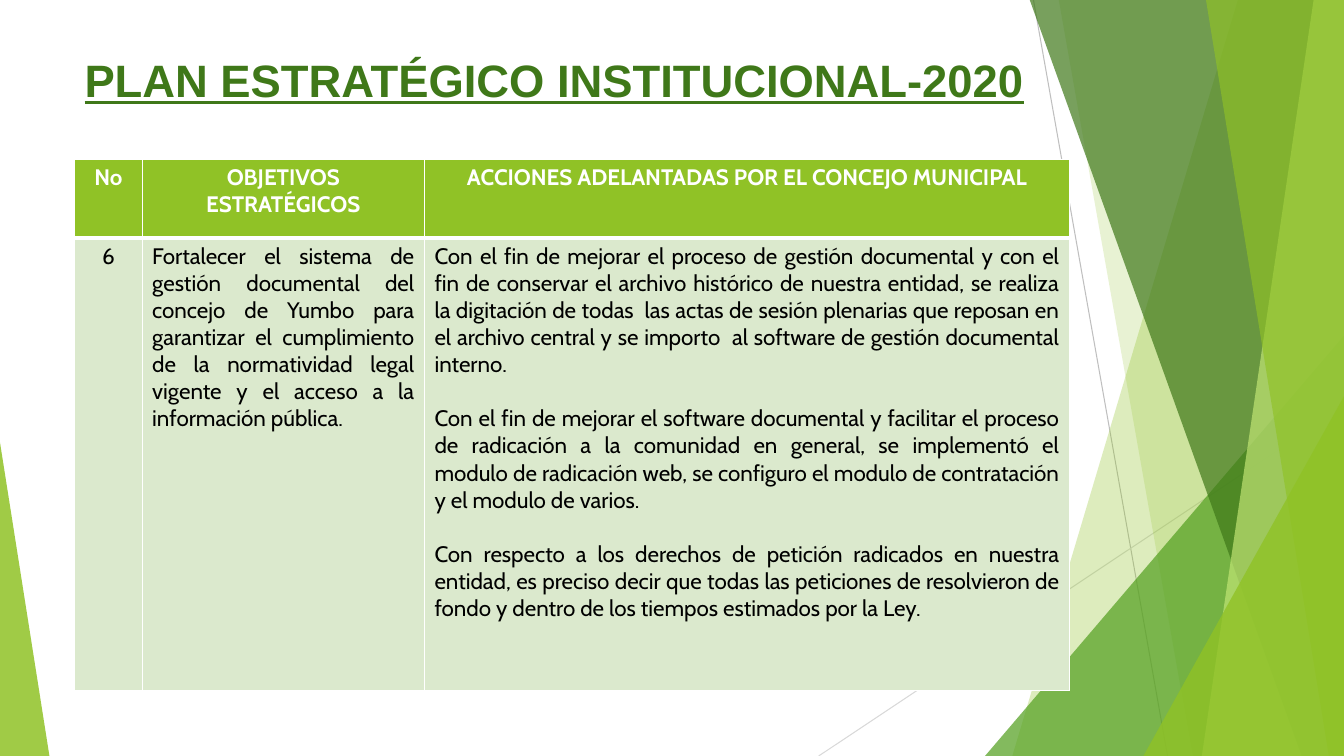
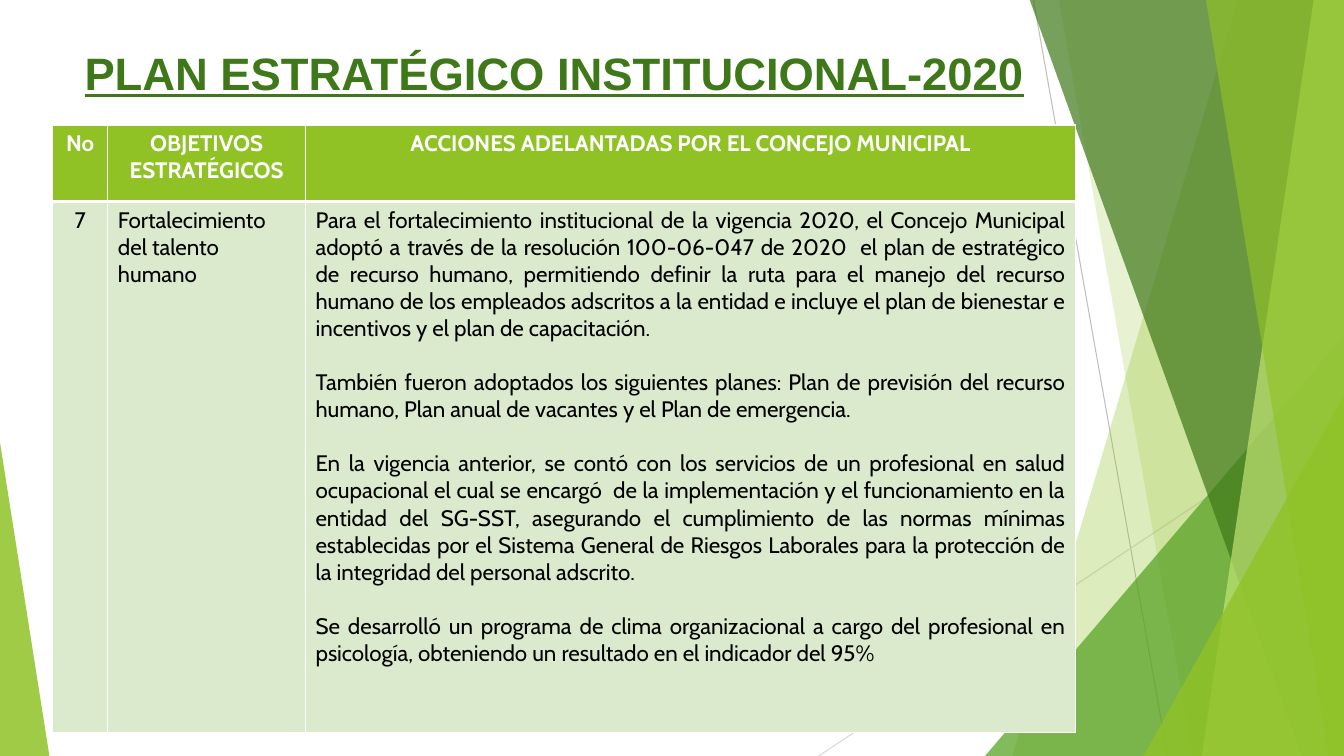
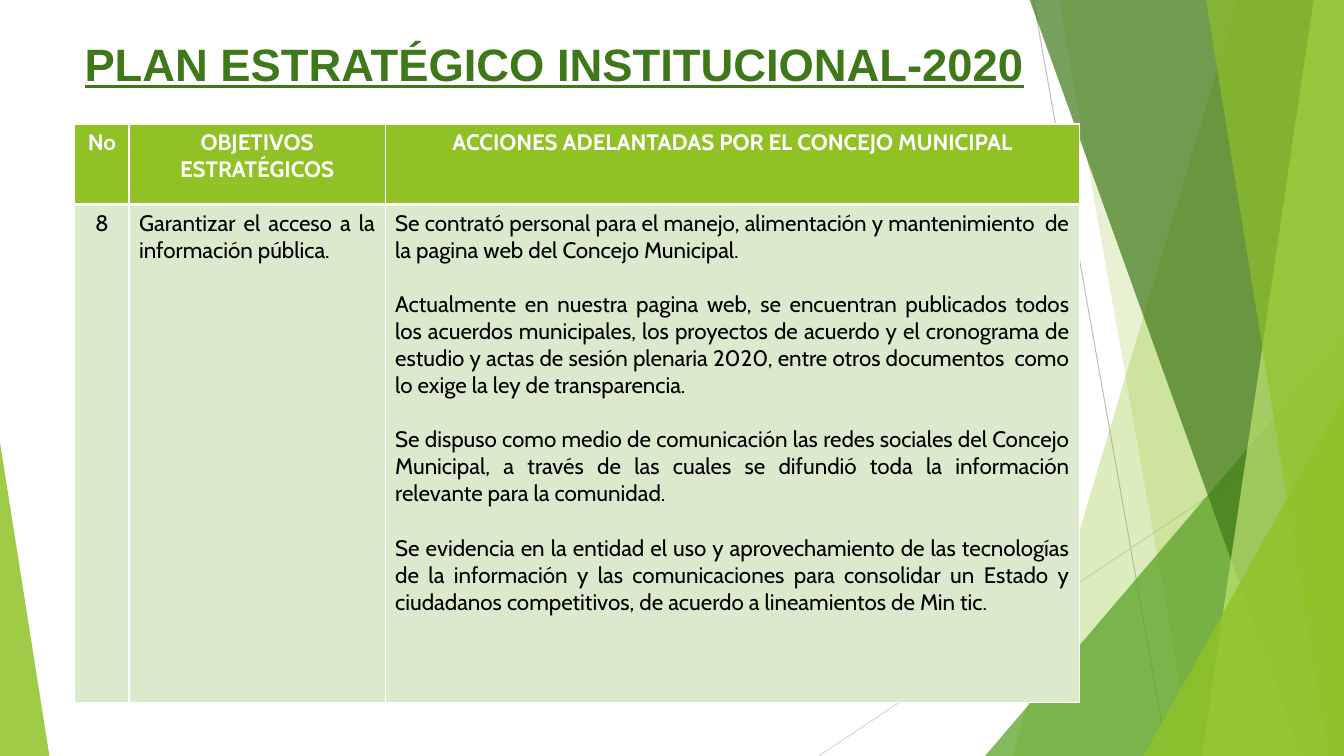
from dataclasses import dataclass

from lxml.etree import SubElement
from pptx import Presentation
from pptx.dml.color import RGBColor
from pptx.enum.shapes import MSO_CONNECTOR as Connector, MSO_SHAPE as Shape
from pptx.enum.text import MSO_ANCHOR as Anchor, PP_ALIGN as Align
from pptx.oxml.ns import qn
from pptx.util import Inches, Pt


@dataclass(frozen=True)
class Theme:
    width: float = 13.33
    height: float = 7.5
    lime: str = "90C226"
    pale_lime: str = "C0E474"
    green: str = "54A021"
    dark_green: str = "3F7819"
    body_fill: str = "DBE9CD"
    white: str = "FFFFFF"
    black: str = "000000"
    grey: str = "BFBFBF"
    light_grey: str = "D9D9D9"
    title_font: str = "Arial"
    body_font: str = "Cabin"
    title_size: float = 32.4
    body_size: float = 16
    paragraph_gap: float = 19.4
    hairline: float = 0.75
    cell_line: float = 1
    header_line: float = 3


THEME = Theme()
TITLE = "PLAN ESTRATÉGICO INSTITUCIONAL-2020"
HEADINGS = ["No", "OBJETIVOS ESTRATÉGICOS", "ACCIONES ADELANTADAS POR EL CONCEJO MUNICIPAL"]


class PlanDeck:
    def __init__(self, theme):
        self.theme = theme
        self.deck = Presentation()
        self.deck.slide_width = Inches(theme.width)
        self.deck.slide_height = Inches(theme.height)
        self.page = None

    def add_page(self):
        self.page = self.deck.slides.add_slide(self.deck.slide_layouts[6])
        self.backdrop()

    # Backdrop elements
    def line(self, start, end, color):
        points = [Inches(value) for value in (*start, *end)]
        line = self.page.shapes.add_connector(Connector.STRAIGHT, *points)
        line.line.color.rgb = RGBColor.from_string(color)
        line.line.width = Pt(self.theme.hairline)
        SubElement(line.element.spPr, qn("a:effectLst"))

    def tint(self, shape, color, opacity):
        shape.shadow.inherit = False
        shape.line.fill.background()
        shape.fill.solid()
        shape.fill.fore_color.rgb = RGBColor.from_string(color)
        fill_color = shape.element.spPr.find(qn("a:solidFill")).find(qn("a:srgbClr"))
        SubElement(fill_color, qn("a:alpha"), val=str(opacity * 1000))

    def wedge(self, top_x, bottom_x, color, opacity):
        """Fill the page from a slanted edge to its right side."""
        right, top, bottom = self.theme.width, -0.01, self.theme.height
        corners = [(top_x, top), (right, top), (right, bottom), (bottom_x, bottom)]
        points = [(Inches(x), Inches(y)) for x, y in corners]
        outline = self.page.shapes.build_freeform(*points[0])
        outline.add_line_segments(points[1:], close=True)
        self.tint(outline.convert_to_shape(), color, opacity)

    def corner(self, left, top, width, apex, color, opacity):
        """Stand a right-angled triangle on the bottom of the page."""
        height = self.theme.height - top
        triangle = self.page.shapes.add_shape(
            Shape.ISOSCELES_TRIANGLE, Inches(left), Inches(top), Inches(width), Inches(height))
        triangle.adjustments[0] = apex
        self.tint(triangle, color, opacity)

    def backdrop(self):
        theme = self.theme
        self.line((10.25, 0), (11.58, theme.height), theme.grey)
        self.line((theme.width, 4.03), (8.12, theme.height), theme.light_grey)
        self.wedge(12.28, 10.04, theme.lime, 30)
        self.wedge(10.5, 11.83, theme.lime, 20)
        self.corner(9.77, 3.33, 3.56, 1, theme.green, 72)
        self.wedge(10.21, 12.91, theme.dark_green, 70)
        self.wedge(13.03, 11.92, theme.pale_lime, 70)
        self.wedge(11.96, 13.18, theme.lime, 65)
        self.corner(11.34, 3.93, 1.99, 1, theme.lime, 80)
        self.corner(0, 4.39, 0.49, 0, theme.lime, 85)

    # Text
    def style(self, para, font, size, color, bold):
        for span in para.runs:
            span.font.name = font
            span.font.size = Pt(size)
            span.font.bold = bold
            span.font.color.rgb = RGBColor.from_string(color)

    def title(self, top, width, height):
        theme = self.theme
        box = self.page.shapes.add_textbox(
            Inches(0.74), Inches(top), Inches(width), Inches(height))
        frame = box.text_frame
        frame.word_wrap = True
        frame.vertical_anchor = Anchor.TOP
        frame.text = TITLE
        para = frame.paragraphs[0]
        self.style(para, theme.title_font, theme.title_size, theme.dark_green, True)
        para.runs[0].font.underline = True

    # Table
    def borders(self, cell, is_header):
        theme = self.theme
        heavy_side = "a:lnB" if is_header else "a:lnT"
        properties = cell._tc.get_or_add_tcPr()
        for side in ("a:lnL", "a:lnR", "a:lnT", "a:lnB"):
            points = theme.header_line if side == heavy_side else theme.cell_line
            edge = SubElement(properties, qn(side), w=str(Pt(points)))
            SubElement(SubElement(edge, qn("a:solidFill")), qn("a:srgbClr"), val=theme.white)

    def cell(self, cell, text, align, is_header):
        theme = self.theme
        self.borders(cell, is_header)
        cell.fill.solid()
        cell.fill.fore_color.rgb = RGBColor.from_string(
            theme.lime if is_header else theme.body_fill)
        cell.text_frame.text = text
        for index, para in enumerate(cell.text_frame.paragraphs):
            para.alignment = align
            if index:
                para.space_before = Pt(theme.paragraph_gap)
            self.style(para, theme.body_font, theme.body_size,
                       theme.white if is_header else theme.black, is_header)

    def table(self, left, top, columns, rows, content, goal_align):
        frame = self.page.shapes.add_table(
            len(rows), len(columns), Inches(left), Inches(top),
            Inches(sum(columns)), Inches(sum(rows)))
        table = frame.table
        table.first_row = table.horz_banding = False
        for column, width in zip(table.columns, columns):
            column.width = Inches(width)
        for row, height in zip(table.rows, rows):
            row.height = Inches(height)
        body_aligns = [Align.CENTER, goal_align, Align.JUSTIFY]
        for index, (heading, text, align) in enumerate(zip(HEADINGS, content, body_aligns)):
            self.cell(table.cell(0, index), heading, Align.CENTER, True)
            self.cell(table.cell(1, index), text, align, False)


# Content: title is (top, width, height)
PAGES = [
    dict(
        title=(0.47, 9.87, 0.96), left=0.74, top=1.58,
        columns=[0.67, 2.8, 6.4], rows=[0.78, 4.49], number="6", goal_align=Align.JUSTIFY,
        goal="Fortalecer el sistema de gestión documental del concejo de Yumbo para garantizar "
             "el cumplimiento de la normatividad legal vigente y el acceso a la información "
             "pública.",
        actions=[
            "Con el fin de mejorar el proceso de gestión documental y con el fin de conservar el "
            "archivo histórico de nuestra entidad, se realiza la digitación de todas  las actas "
            "de sesión plenarias que reposan en el archivo central y se importo  al software de "
            "gestión documental interno.",
            "Con el fin de mejorar el software documental y facilitar el proceso de radicación a "
            "la comunidad en general, se implementó el modulo de radicación web, se configuro el "
            "modulo de contratación y el modulo de varios.",
            "Con respecto a los derechos de petición radicados en nuestra entidad, es preciso "
            "decir que todas las peticiones de resolvieron de fondo y dentro de los tiempos "
            "estimados por la Ley.",
        ]),
    dict(
        title=(0.4, 9.93, 0.84), left=0.52, top=1.24,
        columns=[0.55, 1.96, 7.64], rows=[0.76, 5.27], number="7", goal_align=Align.LEFT,
        goal="Fortalecimiento del talento humano",
        actions=[
            "Para el fortalecimiento institucional de la vigencia 2020, el Concejo Municipal "
            "adoptó a través de la resolución 100-06-047 de 2020  el plan de estratégico de "
            "recurso humano, permitiendo definir la ruta para el manejo del recurso humano de "
            "los empleados adscritos a la entidad e incluye el plan de bienestar e incentivos y "
            "el plan de capacitación.",
            "También fueron adoptados los siguientes planes: Plan de previsión del recurso "
            "humano, Plan anual de vacantes y el Plan de emergencia.",
            "En la vigencia anterior, se contó con los servicios de un profesional en salud "
            "ocupacional el cual se encargó  de la implementación y el funcionamiento en la "
            "entidad del SG-SST, asegurando el cumplimiento de las normas mínimas establecidas "
            "por el Sistema General de Riesgos Laborales para la protección de la integridad "
            "del personal adscrito.",
            "Se desarrolló un programa de clima organizacional a cargo del profesional en "
            "psicología, obteniendo un resultado en el indicador del 95%",
        ]),
    dict(
        title=(0.31, 9.97, 0.92), left=0.74, top=1.23,
        columns=[0.54, 2.54, 6.89], rows=[0.8, 4.94], number="8", goal_align=Align.JUSTIFY,
        goal="Garantizar el acceso a la información pública.",
        actions=[
            "Se contrató personal para el manejo, alimentación y mantenimiento  de la pagina web "
            "del Concejo Municipal.",
            "Actualmente en nuestra pagina web, se encuentran publicados todos los acuerdos "
            "municipales, los proyectos de acuerdo y el cronograma de estudio y actas de sesión "
            "plenaria 2020, entre otros documentos  como lo exige la ley de transparencia.",
            "Se dispuso como medio de comunicación las redes sociales del Concejo Municipal, a "
            "través de las cuales se difundió toda la información relevante para la comunidad.",
            "Se evidencia en la entidad el uso y aprovechamiento de las tecnologías de la "
            "información y las comunicaciones para consolidar un Estado y ciudadanos "
            "competitivos, de acuerdo a lineamientos de Min tic.",
        ]),
]


def main():
    plan = PlanDeck(THEME)
    for page in PAGES:
        plan.add_page()
        content = [page["number"], page["goal"], "\n".join(page["actions"])]
        plan.table(page["left"], page["top"], page["columns"], page["rows"],
                   content, page["goal_align"])
        plan.title(*page["title"])
    plan.deck.save("out.pptx")


if __name__ == "__main__":
    main()
